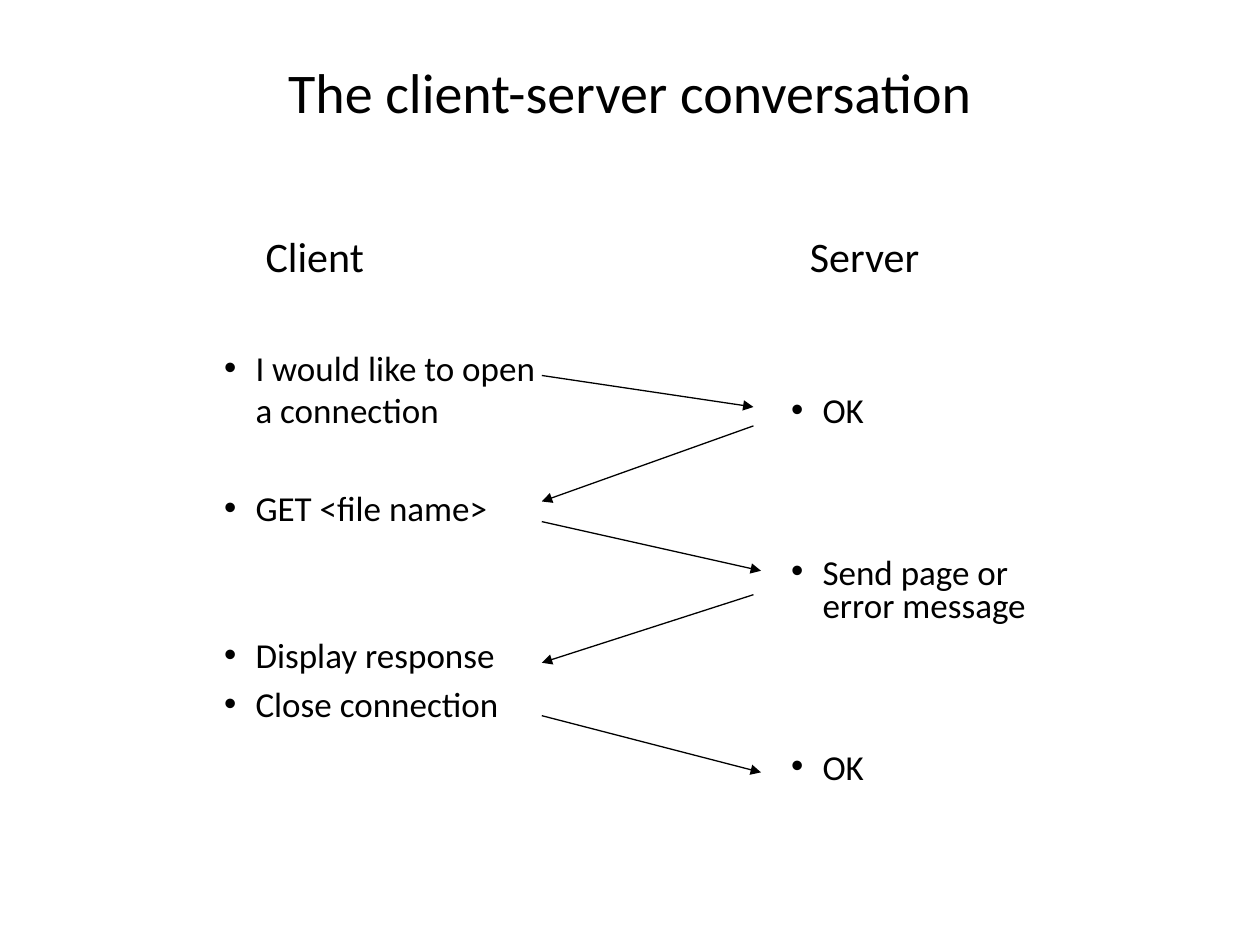
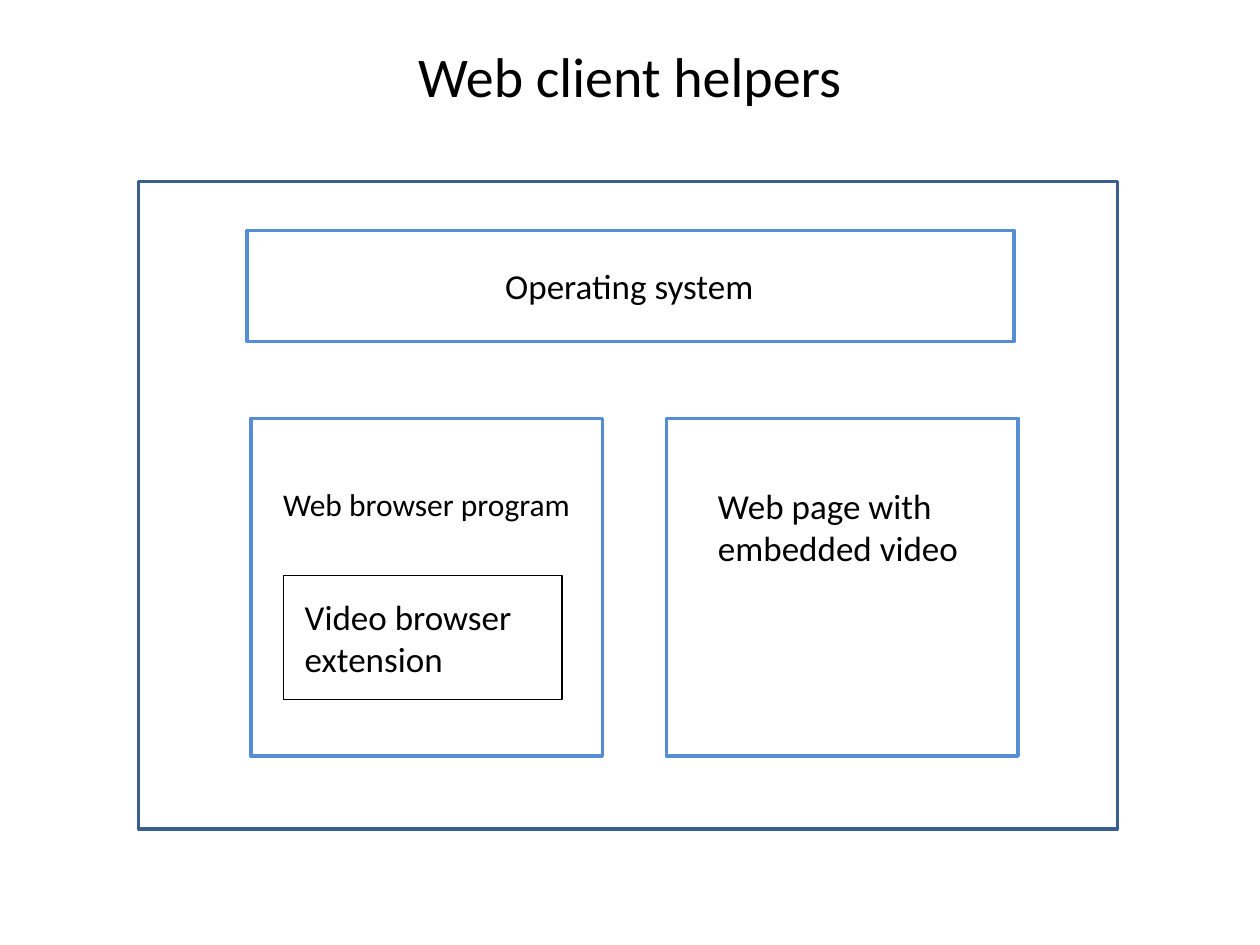
"""Build two slides on web clients: the client-server conversation and client helpers."""
from lxml.etree import SubElement
from pptx import Presentation
from pptx.dml.color import RGBColor
from pptx.enum.shapes import MSO_CONNECTOR, MSO_SHAPE
from pptx.enum.text import MSO_ANCHOR, MSO_AUTO_SIZE, PP_ALIGN
from pptx.oxml.ns import qn
from pptx.util import Inches, Pt

COLORS = {"text": "000000", "frame": "3A5F8C", "box": "558ED5"}
FONT = "Calibri"


def write(frame, lines, size, align=PP_ALIGN.LEFT, bullet=False, line_spacing=1.0):
    """Fill a text frame with (text, space before in points) pairs."""
    frame.auto_size = MSO_AUTO_SIZE.NONE
    frame.word_wrap = True
    frame.vertical_anchor = MSO_ANCHOR.TOP
    for index, (text, space_before) in enumerate(lines):
        paragraph = frame.paragraphs[0] if index == 0 else frame.add_paragraph()
        paragraph.text = text
        paragraph.alignment = align
        paragraph.line_spacing = line_spacing
        paragraph.space_before = Pt(space_before)
        if bullet:
            properties = paragraph._p.get_or_add_pPr()
            properties.set("marL", str(Inches(0.25)))
            properties.set("indent", str(Inches(-0.25)))
            SubElement(properties, qn("a:buFont"), typeface="Arial")
            SubElement(properties, qn("a:buChar"), char="•")
        paragraph.font.name = FONT
        paragraph.font.size = Pt(size)
        paragraph.font.color.rgb = RGBColor.from_string(COLORS["text"])


def add_titled_slide(title, top):
    """Add a title-only slide with its title across the full width."""
    slide = deck.slides.add_slide(deck.slide_layouts[5])
    heading = slide.shapes.title
    heading.left, heading.top = Inches(0), Inches(top)
    heading.width, heading.height = deck.slide_width, Inches(1)
    write(heading.text_frame, [(title, 0)], 32, PP_ALIGN.CENTER)
    return slide


deck = Presentation()
deck.slide_width, deck.slide_height = Inches(10), Inches(7.5)

conversation = add_titled_slide("The client-server conversation", 0.41)

for party, left in (("Client", 2.01), ("Server", 6.33)):
    party_box = conversation.shapes.add_textbox(Inches(left), Inches(1.78), Inches(1.3), Inches(0.5))
    write(party_box.text_frame, [(party, 0)], 24)

client_lines = [
    ("I would like to open a connection", 0),
    ("GET <file name>", 32),
    ("Display response", 60),
    ("Close connection", 4),
]
client_box = conversation.shapes.add_textbox(Inches(1.68), Inches(2.7), Inches(2.83), Inches(4.6))
write(client_box.text_frame, client_lines, 20, bullet=True)

server_lines = [("OK", 0), ("Send page or error message", 73), ("OK", 73)]
server_box = conversation.shapes.add_textbox(Inches(6.18), Inches(3.1), Inches(2.14), Inches(4.2))
write(server_box.text_frame, server_lines, 20, bullet=True, line_spacing=0.8)

messages = [
    (4.3, 2.98, 5.98, 3.23),
    (5.98, 3.38, 4.3, 3.98),
    (4.3, 4.14, 6.04, 4.53),
    (5.98, 4.72, 4.3, 5.26),
    (4.3, 5.68, 6.04, 6.13),
]
for ends in messages:
    message = conversation.shapes.add_connector(MSO_CONNECTOR.STRAIGHT, *map(Inches, ends))
    message.line.color.rgb = RGBColor.from_string(COLORS["text"])
    message.line.width = Pt(0.75)
    SubElement(message.line._get_or_add_ln(), qn("a:tailEnd"), type="triangle")
    SubElement(message._element.spPr, qn("a:effectLst"))

helpers = add_titled_slide("Web client helpers", 0.28)

outlines = [
    (1.1, 1.44, 7.77, 5.14, "frame", 2),
    (1.96, 1.83, 6.09, 0.88, "box", 2),
    (1.99, 3.32, 2.79, 2.68, "box", 2),
    (5.29, 3.32, 2.79, 2.68, "box", 2),
    (2.25, 4.57, 2.21, 0.98, "text", 0.75),
]
for *bounds, color, weight in outlines:
    outline = helpers.shapes.add_shape(MSO_SHAPE.RECTANGLE, *map(Inches, bounds))
    outline.shadow.inherit = False
    outline.fill.background()
    outline.line.color.rgb = RGBColor.from_string(COLORS[color])
    outline.line.width = Pt(weight)

labels = [
    ("Operating system", 3.78, 2.05, 2.43, 0.44, 20, PP_ALIGN.CENTER),
    ("Web browser program", 1.99, 3.8, 2.79, 0.4, 18, PP_ALIGN.CENTER),
    ("Video browser extension", 2.32, 4.68, 2.14, 0.77, 20, PP_ALIGN.LEFT),
    ("Web page with embedded video", 5.6, 3.8, 2.17, 0.77, 20, PP_ALIGN.LEFT),
]
for text, *bounds, size, align in labels:
    label = helpers.shapes.add_textbox(*map(Inches, bounds))
    write(label.text_frame, [(text, 0)], size, align)

deck.save("out.pptx")
